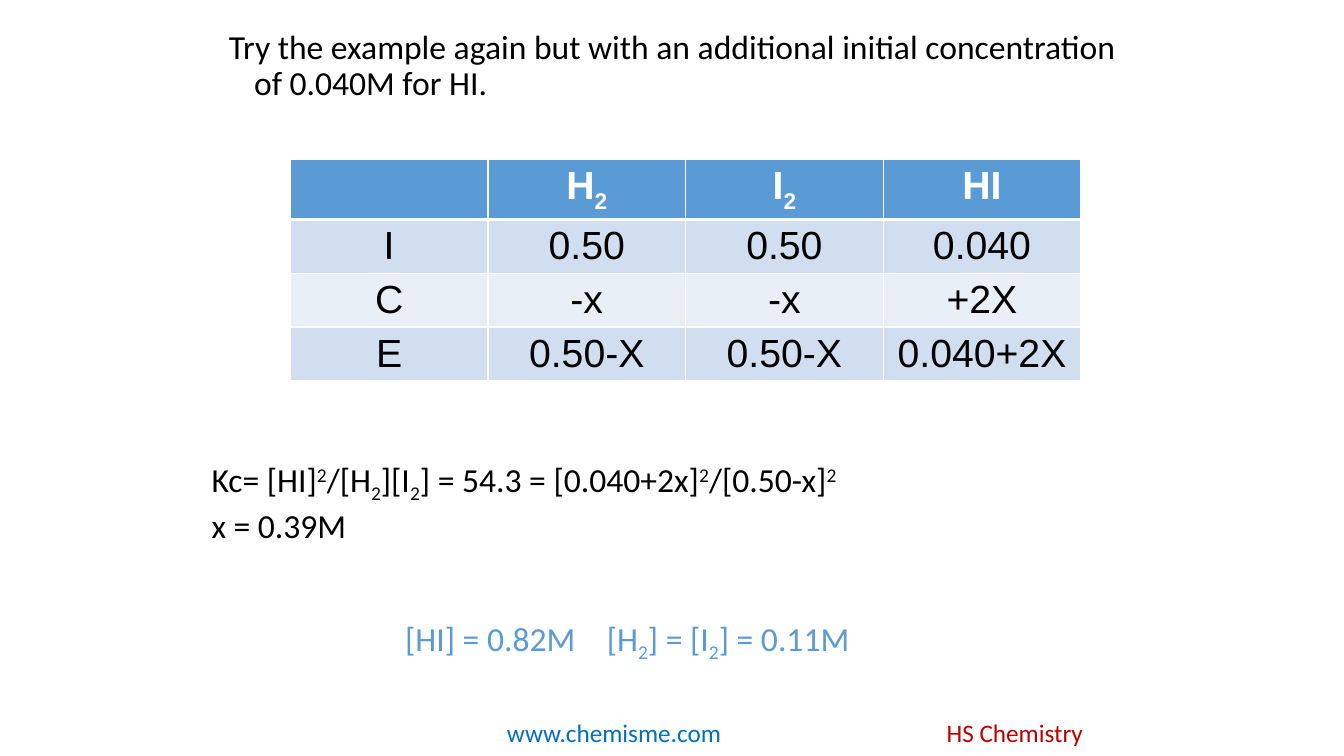
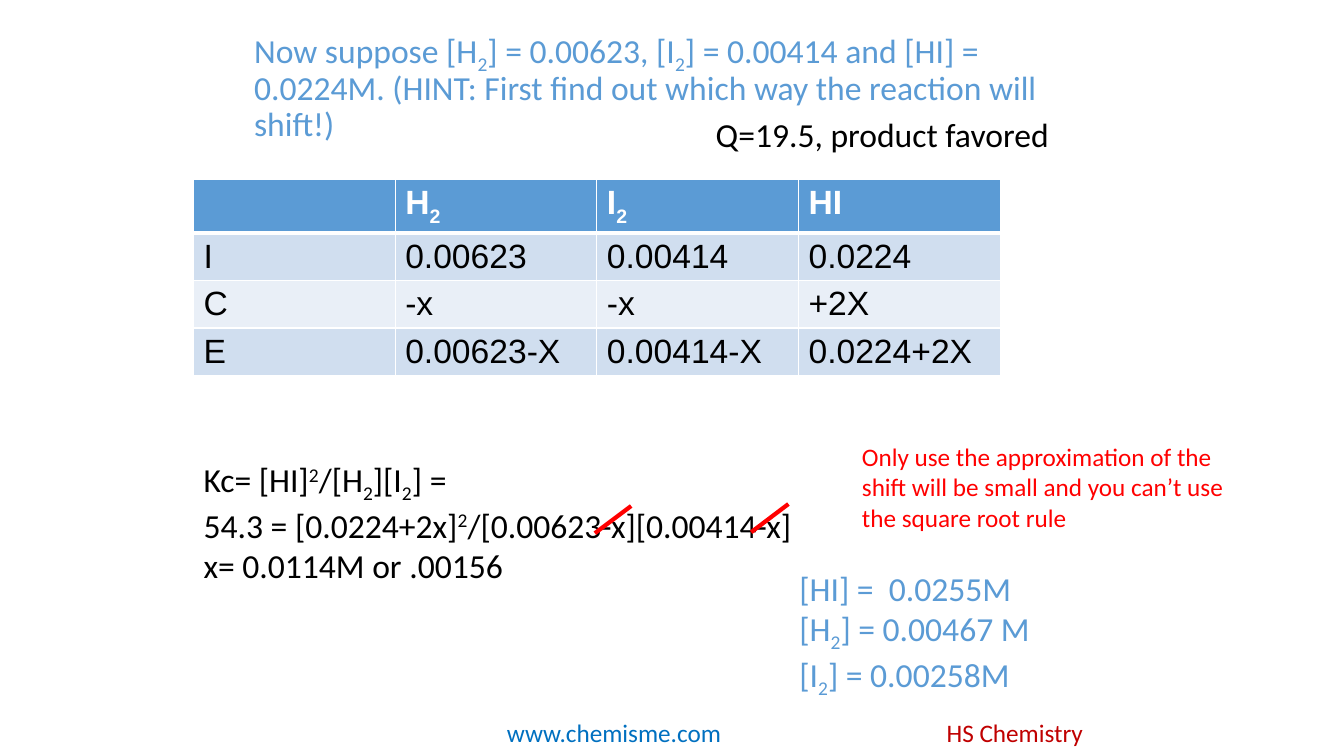
from pptx import Presentation
from pptx.dml.color import RGBColor
from pptx.enum.shapes import MSO_CONNECTOR
from pptx.enum.text import MSO_ANCHOR, MSO_AUTO_SIZE, PP_ALIGN
from pptx.oxml.ns import qn
from pptx.util import Inches, Pt
from lxml.etree import SubElement

COLORS = {
    "black": "000000", "white": "FFFFFF", "accent": "5B9BD5",
    "band_dark": "D0DEEF", "band_light": "E9EFF7",
    "site": "0070C0", "course": "C00000", "warning": "FF0000",
}
# A mark lowers (_) or raises (^) the one character after it
BASELINES = {"_": "-25000", "^": "30000"}
TITLE_BOX_LEFT, TITLE_BOX_TOP, TITLE_BOX_WIDTH = 2.17, 0.25, 9
HANGING = 0.25

# Content: boxes are (left, top, width, height) in inches
FOOTERS = [
    ("www.chemisme.com", (4.93, 7.07, 2.41, 0.4), "site"),
    ("HS Chemistry", (9.29, 7.07, 2.41, 0.4), "course"),
]
SPECIES = ["", "H_2", "I_2", "HI"]
LESSONS = [
    {
        "title": "Try the example again but with an additional initial "
                 "concentration of 0.040M for HI.",
        "title_format": {"color": "black", "first": -HANGING},
        "title_height": 1.25,
        "ice": [
            SPECIES,
            ["I", "0.50", "0.50", "0.040"],
            ["C", "-x", "-x", "+2X"],
            ["E", "0.50-X", "0.50-X", "0.040+2X"],
        ],
        "ice_format": {"left": 2.88, "top": 1.58, "column": 1.96, "header": 0.59,
                       "row": 0.53, "size": 28, "align": PP_ALIGN.CENTER},
        "texts": [
            (["Kc= [HI]^2/[H_2][I_2] = 54.3 = [0.040+2x]^2/[0.50-x]^2",
              "x = 0.39M"],
             (2, 4.5, 9.33, 1.38), {}),
            (["[HI] = 0.82M\t[H_2] = [I_2] = 0.11M"],
             (3.92, 6.08, 6.83, 0.5), {"color": "accent"}),
        ],
        "strikes": [],
    },
    {
        "title": "Now suppose [H_2] = 0.00623, [I_2] = 0.00414 and [HI] = 0.0224M. "
                 "(HINT: First find out which way the reaction will shift!)",
        "title_format": {"color": "accent", "first": 0},
        "title_height": 1.17,
        "ice": [
            SPECIES,
            ["I", "0.00623", "0.00414", "0.0224"],
            ["C", "-x", "-x", "+2X"],
            ["E", "0.00623-X", "0.00414-X", "0.0224+2X"],
        ],
        "ice_format": {"left": 1.92, "top": 1.78, "column": 2, "header": 0.53,
                       "row": 0.47, "size": 24, "align": PP_ALIGN.LEFT},
        "texts": [
            (["Kc= [HI]^2/[H_2][I_2] =",
              "54.3 = [0.0224+2x]^2/[0.00623-x][0.00414-x]",
              "x= 0.0114M or .00156"],
             (1.92, 4.5, 9.08, 1.72), {}),
            (["[HI] =  0.0255M", "[H_2] = 0.00467 M", "[I_2] = 0.00258M"],
             (7.83, 5.58, 3.58, 1.31), {"color": "accent"}),
            (["Q=19.5, product favored"], (7, 1.08, 4.42, 0.5), {}),
            (["Only use the approximation of the shift will be small and "
              "you can’t use the square root rule"],
             (8.45, 4.33, 4.09, 1.01), {"color": "warning", "size": 18}),
        ],
        "strikes": [(6.26, 5.02, 5.9, 5.29), (7.82, 5, 7.45, 5.28)],
    },
]


def rgb(name):
    return RGBColor.from_string(COLORS[name])


def split_marks(text):
    """Yield (piece, baseline) pairs from marked text."""
    plain = ""
    chars = iter(text)
    for char in chars:
        if char in BASELINES:
            if plain:
                yield plain, None
            yield next(chars), BASELINES[char]
            plain = ""
        else:
            plain += char
    if plain:
        yield plain, None


def write(frame, lines, size=24, color="black", font="Calibri", bold=False,
          align=PP_ALIGN.LEFT, spacing=None, indent=0, first=0):
    frame.word_wrap = True
    for number, line in enumerate(lines):
        paragraph = frame.add_paragraph() if number else frame.paragraphs[0]
        paragraph.alignment = align
        paragraph.line_spacing = spacing
        if indent:
            properties = paragraph._p.get_or_add_pPr()
            properties.set("marL", str(Inches(indent)))
            properties.set("indent", str(Inches(first)))
        for piece, baseline in split_marks(line):
            run = paragraph.add_run()
            run.text = piece
            run.font.size, run.font.name, run.font.bold = Pt(size), font, bold
            run.font.color.rgb = rgb(color)
            if baseline:
                run._r.get_or_add_rPr().set("baseline", baseline)


def add_text(slide, lines, box, **text_format):
    text_box = slide.shapes.add_textbox(*map(Inches, box))
    write(text_box.text_frame, lines, **text_format)
    return text_box


def add_footers(layout, slide):
    """Build the footers and move them to the layout that all slides use."""
    for number, (text, box, color) in enumerate(FOOTERS):
        footer = add_text(slide, [text], box, size=18, color=color).element
        footer.xpath("./p:nvSpPr/p:cNvPr")[0].set("id", str(100 + number))
        layout.shapes.element.append(footer)


def set_title(slide, lesson):
    title = slide.shapes.title
    title.left, title.top = Inches(TITLE_BOX_LEFT), Inches(TITLE_BOX_TOP)
    title.width, title.height = Inches(TITLE_BOX_WIDTH), Inches(lesson["title_height"])
    title.text_frame.vertical_anchor = MSO_ANCHOR.TOP
    title.text_frame.auto_size = MSO_AUTO_SIZE.NONE
    write(title.text_frame, [lesson["title"]], spacing=0.9, indent=HANGING,
          **lesson["title_format"])


def set_borders(cell, widths):
    properties = cell._tc.get_or_add_tcPr()
    for position, (side, width) in enumerate(widths.items()):
        border = SubElement(properties, qn(f"a:{side}"), w=str(Pt(width)))
        fill = SubElement(border, qn("a:solidFill"))
        SubElement(fill, qn("a:srgbClr"), val=COLORS["white"])
        properties.insert(position, border)


def add_ice_table(slide, rows, left, top, column, header, row, size, align):
    columns = len(rows[0])
    height = header + row * (len(rows) - 1)
    table = slide.shapes.add_table(
        len(rows), columns, Inches(left), Inches(top),
        Inches(column * columns), Inches(height)).table
    for table_column in table.columns:
        table_column.width = Inches(column)
    for r, values in enumerate(rows):
        is_header = r == 0
        table.rows[r].height = Inches(header if is_header else row)
        band = "accent" if is_header else ("band_light", "band_dark")[r % 2]
        for c, value in enumerate(values):
            cell = table.cell(r, c)
            cell.fill.solid()
            cell.fill.fore_color.rgb = rgb(band)
            write(cell.text_frame, [value], size=size, font="Arial", align=align,
                  bold=is_header, color="white" if is_header else "black")
            set_borders(cell, {"lnL": 1, "lnR": 1, "lnT": 3 if r == 1 else 1,
                               "lnB": 3 if is_header else 1})


def add_strike(slide, ends):
    strike = slide.shapes.add_connector(MSO_CONNECTOR.STRAIGHT, *map(Inches, ends))
    strike.line.color.rgb = rgb("warning")
    strike.line.width = Pt(3)
    SubElement(strike.element.spPr, qn("a:effectLst"))


def main():
    deck = Presentation()
    deck.slide_width, deck.slide_height = Inches(13.33), Inches(7.5)
    title_only = deck.slide_layouts[5]
    for number, lesson in enumerate(LESSONS):
        slide = deck.slides.add_slide(title_only)
        if number == 0:
            add_footers(title_only, slide)
        set_title(slide, lesson)
        add_ice_table(slide, lesson["ice"], **lesson["ice_format"])
        for lines, box, text_format in lesson["texts"]:
            add_text(slide, lines, box, **text_format)
        for ends in lesson["strikes"]:
            add_strike(slide, ends)
    deck.save("out.pptx")


if __name__ == "__main__":
    main()
